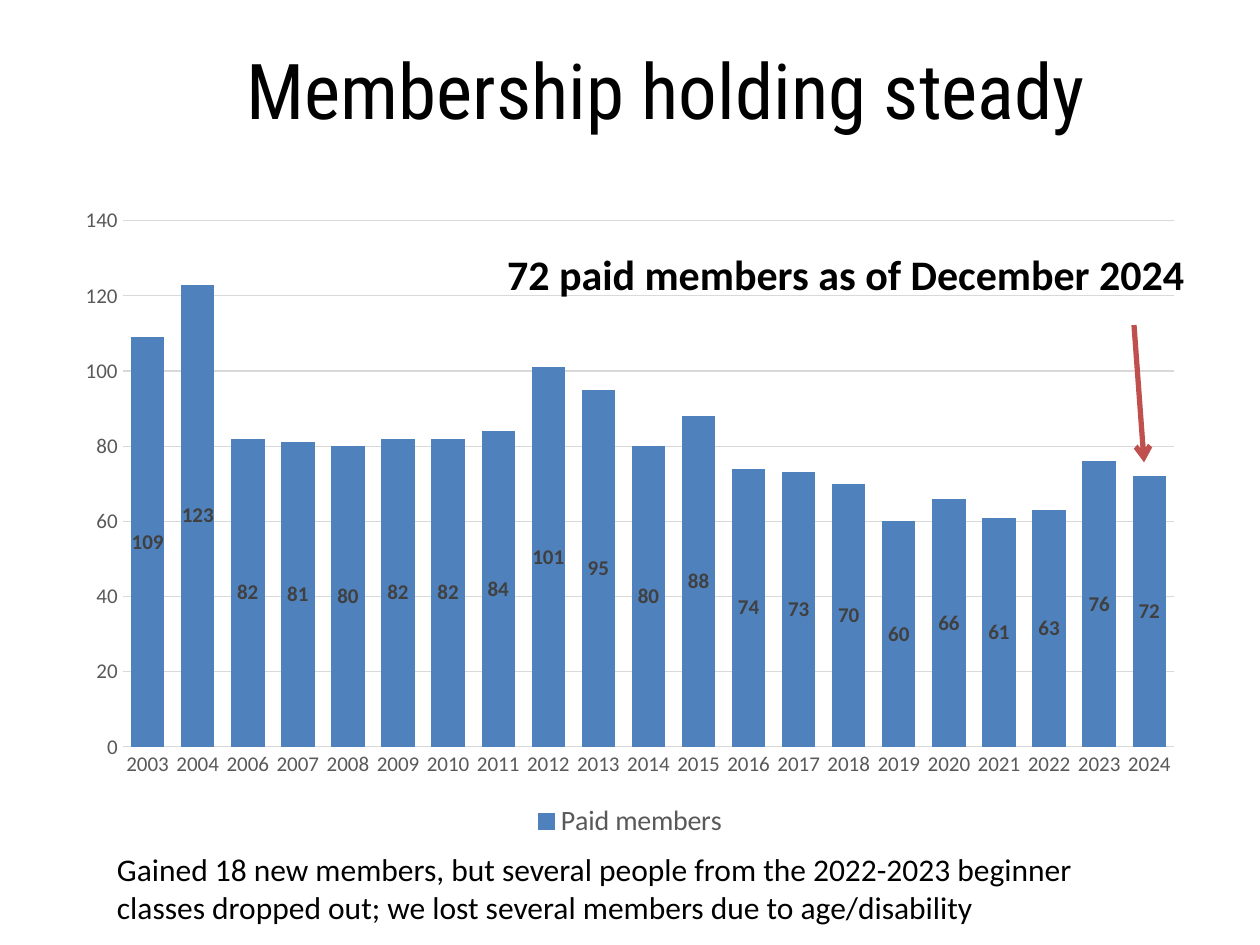
from dataclasses import dataclass

from lxml import etree
from pptx import Presentation
from pptx.chart.data import CategoryChartData
from pptx.dml.color import RGBColor
from pptx.enum.chart import XL_CHART_TYPE, XL_LABEL_POSITION, XL_LEGEND_POSITION, XL_TICK_MARK
from pptx.enum.shapes import MSO_CONNECTOR
from pptx.enum.text import MSO_ANCHOR, PP_ALIGN
from pptx.oxml.ns import qn
from pptx.util import Inches, Pt

STACKED = XL_CHART_TYPE.COLUMN_STACKED
CENTER_LABEL = XL_LABEL_POSITION.CENTER
BOTTOM = XL_LEGEND_POSITION.BOTTOM
NO_TICK = XL_TICK_MARK.NONE
STRAIGHT = MSO_CONNECTOR.STRAIGHT
TOP, MIDDLE = MSO_ANCHOR.TOP, MSO_ANCHOR.MIDDLE
LEFT, CENTER, RIGHT = PP_ALIGN.LEFT, PP_ALIGN.CENTER, PP_ALIGN.RIGHT


@dataclass(frozen=True)
class Theme:
    title_font: str = "Roboto Condensed"
    body_font: str = "Calibri"
    text: str = "000000"
    muted: str = "595959"
    label: str = "404040"
    grid: str = "D9D9D9"
    bar: str = "4F81BD"
    arrow: str = "C0504D"
    title_size: int = 44
    callout_size: int = 24
    note_size: int = 18
    legend_size: int = 16
    axis_size: int = 12
    grid_width: float = 0.75
    arrow_width: int = 3


@dataclass(frozen=True)
class TextBlock:
    text: str
    area: tuple[float, float, float, float]
    size: int
    font: str
    align: PP_ALIGN = LEFT
    anchor: MSO_ANCHOR = TOP
    bold: bool = False


THEME = Theme()

TEXT_BLOCKS = [
    TextBlock("Membership holding steady", (1.08, 0.08, 8.42, 1.25),
              THEME.title_size, THEME.title_font, CENTER, MIDDLE),
    TextBlock("72 paid members as of December 2024", (2.42, 1.92, 7.08, 0.5),
              THEME.callout_size, THEME.body_font, RIGHT, bold=True),
    TextBlock("Gained 18 new members, but several people from the 2022-2023 beginner "
              "classes dropped out; we lost several members due to age/disability",
              (0.83, 6.7, 8.33, 0.71), THEME.note_size, THEME.body_font),
]

YEARS = [str(year) for year in range(2003, 2025) if year != 2005]
PAID_MEMBERS = [109, 123, 82, 81, 80, 82, 82, 84, 101, 95, 80,
                88, 74, 73, 70, 60, 66, 61, 63, 76, 72]


def style_font(font, size: int, color: str, name: str = THEME.body_font,
               bold: bool = False) -> None:
    font.name = name
    font.size = Pt(size)
    font.bold = bold
    font.color.rgb = RGBColor.from_string(color)


def style_line(line, color: str, width: float) -> None:
    line.color.rgb = RGBColor.from_string(color)
    line.width = Pt(width)


def add_text(page, block: TextBlock) -> None:
    box = page.shapes.add_textbox(*map(Inches, block.area))
    frame = box.text_frame
    frame.word_wrap = True
    frame.vertical_anchor = block.anchor
    para = frame.paragraphs[0]
    para.text = block.text
    para.alignment = block.align
    style_font(para.font, block.size, THEME.text, block.font, block.bold)


def add_member_chart(page) -> None:
    data = CategoryChartData()
    data.categories = YEARS
    data.add_series("Paid members", PAID_MEMBERS)
    area = map(Inches, (0.5, 1.55, 9, 5.15))
    chart = page.shapes.add_chart(STACKED, *area, data).chart
    chart.has_title = False
    style_font(chart.font, 10, THEME.text)

    chart.has_legend = True
    chart.legend.position = BOTTOM
    chart.legend.include_in_layout = False
    style_font(chart.legend.font, THEME.legend_size, THEME.muted)

    for axis in (chart.category_axis, chart.value_axis):
        axis.major_tick_mark = NO_TICK
        axis.minor_tick_mark = NO_TICK
        style_font(axis.tick_labels.font, THEME.axis_size, THEME.muted)
    style_line(chart.category_axis.format.line, THEME.grid, THEME.grid_width)
    value_axis = chart.value_axis
    value_axis.minimum_scale = 0
    value_axis.maximum_scale = 140
    value_axis.major_unit = 20
    value_axis.format.line.fill.background()
    style_line(value_axis.major_gridlines.format.line, THEME.grid, THEME.grid_width)

    plot = chart.plots[0]
    plot.gap_width = 50
    plot.overlap = 100
    plot.vary_by_categories = False
    series = plot.series[0]
    series.format.fill.solid()
    series.format.fill.fore_color.rgb = RGBColor.from_string(THEME.bar)
    labels = series.data_labels
    labels.show_value = True
    labels.position = CENTER_LABEL
    style_font(labels.font, THEME.axis_size, THEME.label, bold=True)


def add_arrow(page, start: tuple[float, float], end: tuple[float, float]) -> None:
    arrow = page.shapes.add_connector(STRAIGHT, *map(Inches, start + end))
    style_line(arrow.line, THEME.arrow, THEME.arrow_width)
    properties = arrow._element.spPr
    etree.SubElement(properties.find(qn("a:ln")), qn("a:tailEnd"), type="arrow")
    etree.SubElement(properties, qn("a:effectLst"))


def main() -> None:
    deck = Presentation()
    deck.slide_width = Inches(10)
    deck.slide_height = Inches(7.5)
    page = deck.slides.add_slide(deck.slide_layouts[6])
    add_member_chart(page)
    for block in TEXT_BLOCKS:
        add_text(page, block)
    add_arrow(page, (9, 2.58), (9.08, 3.67))
    deck.save("out.pptx")


if __name__ == "__main__":
    main()
